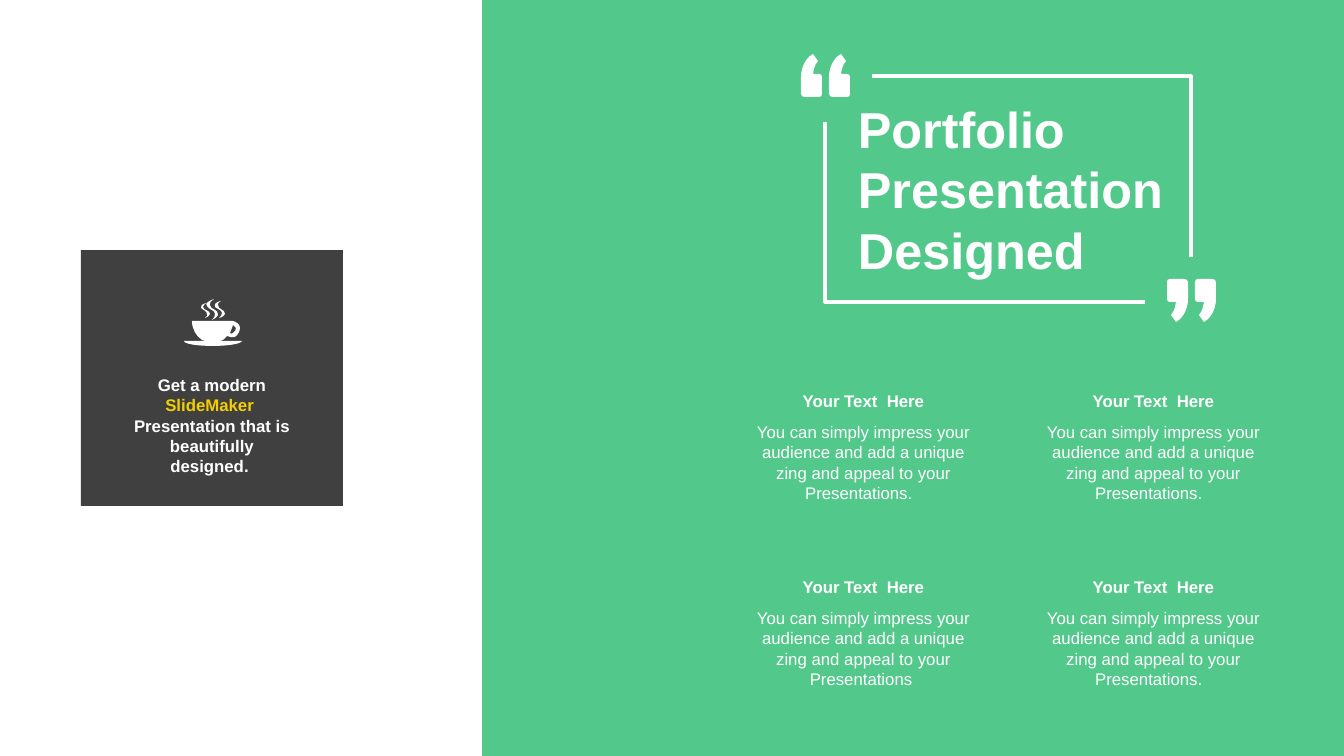
from lxml.etree import SubElement
from pptx import Presentation
from pptx.dml.color import RGBColor
from pptx.enum.shapes import MSO_SHAPE
from pptx.enum.text import MSO_AUTO_SIZE, PP_ALIGN
from pptx.oxml.ns import qn
from pptx.util import Pt

# Content
WHITE, GREEN, CHARCOAL, YELLOW = "FFFFFF", "52C88B", "404040", "F1CF01"
TITLE = [[("Portfolio", WHITE)], [("Presentation Designed", WHITE)]]
TAGLINE = [[("Get a modern ", WHITE), ("SlideMaker  ", YELLOW),
            ("Presentation that is beautifully designed. ", WHITE)]]
HEADING = "Your Text  Here"
PITCH = "You can simply impress your audience and add a unique zing and appeal to your Presentations"
FEATURES = [(HEADING, PITCH + ".  "), (HEADING, PITCH + ".  "),
            (HEADING, PITCH + " "), (HEADING, PITCH + ".  ")]

# Outlines in px: a pair is a corner, six numbers are a Bezier curve
QUOTE_MARK = [[
    (17, 0), (3, 0), (1, 0, 0, 1, 0, 3), (0, 20), (0, 22, 1, 23, 3, 23),
    (5, 23, 7, 23, 9, 23), (8, 28, 8, 31, 4, 36), (9, 43), (18, 38, 21, 27, 21, 20),
    (21, 20, 21, 18, 21, 17), (21, 3), (21, 1, 19, 0, 17, 0)]]
CUP = [
    [(49, 26), (48, 29, 47, 32, 46, 34), (47, 35, 48, 35, 49, 34),
     (51, 33, 52, 31, 52, 29), (51, 28, 50, 27, 49, 26)],
    [(49, 22), (52, 23, 56, 25, 56, 29), (56, 32, 54, 36, 51, 38),
     (48, 39, 46, 38, 43, 37), (42, 38, 41, 40, 39, 41), (38, 41, 36, 42, 35, 42),
     (58, 42), (57, 45, 44, 47, 29, 47), (13, 47, 0, 45, 0, 42), (22, 42),
     (21, 42, 19, 41, 18, 41), (12, 37, 8, 30, 8, 22)],
    [(23, 4), (21, 5, 19, 6, 19, 8), (20, 12, 26, 11, 26, 15), (25, 17, 24, 18, 21, 19),
     (23, 17, 24, 17, 23, 15), (23, 12, 19, 11, 17, 9), (16, 7, 18, 5, 23, 4)],
    [(37, 2), (35, 4, 33, 4, 34, 6), (34, 11, 41, 10, 41, 15), (40, 17, 39, 18, 35, 19),
     (37, 17, 38, 16, 38, 14), (38, 11, 33, 10, 31, 8), (30, 5, 32, 3, 37, 2)],
    [(30, 0), (27, 3, 25, 3, 26, 6), (26, 11, 35, 10, 34, 16), (33, 18, 32, 19, 28, 21),
     (30, 19, 31, 18, 31, 15), (31, 11, 25, 11, 23, 7), (21, 5, 24, 2, 30, 0)]]
FRAME_LINES = [[(872, 76), (1191, 76), (1191, 257)],
               [(1145, 302), (825, 302), (825, 122)]]
# Left, top and direction of each quote mark; -1 turns it upside down
QUOTE_PLACES = [(822, 97, -1), (850, 97, -1), (1195, 279, 1), (1167, 279, 1)]

# Layout
PX = 914400 / 100.8
GRID_LEFT, GRID_TOP, COLUMN_STEP, ROW_STEP = 741, 386, 290, 186
FEATURE_WIDTH, HEADING_HEIGHT, BODY_HEIGHT = 245, 31, 92


def px(length):
    return round(length * PX)


def color(hex_string):
    return RGBColor.from_string(hex_string)


def paint(shape, fill):
    shape.shadow.inherit = False
    shape.fill.solid()
    shape.fill.fore_color.rgb = color(fill)
    shape.line.fill.background()


def add_rectangle(page, left, top, width, height, fill):
    box = page.shapes.add_shape(MSO_SHAPE.RECTANGLE, px(left), px(top), px(width), px(height))
    paint(box, fill)


def add_text(page, left, top, width, height, paragraphs, size=12, bold=False,
             align=PP_ALIGN.CENTER):
    box = page.shapes.add_textbox(px(left), px(top), px(width), px(height))
    frame = box.text_frame
    frame.word_wrap = True
    frame.auto_size = MSO_AUTO_SIZE.SHAPE_TO_FIT_TEXT
    font_format = {"name": "Arial", "size": Pt(size), "bold": bold}
    for index, spans in enumerate(paragraphs):
        para = frame.add_paragraph() if index else frame.paragraphs[0]
        para.alignment = align
        for text, text_color in spans:
            span = para.add_run()
            span.text = text
            for name, value in font_format.items():
                setattr(span.font, name, value)
            span.font.color.rgb = color(text_color)


def add_outline(page, contours, left=0, top=0, direction=1, close=True):
    """Draw the contours, then bend the segments that are curves."""
    def place(numbers):
        return [(px(left + direction * x), px(top + direction * y))
                for x, y in zip(numbers[::2], numbers[1::2])]

    builder = None
    for contour in contours:
        ends = [place(segment)[-1] for segment in contour]
        if builder is None:
            builder = page.shapes.build_freeform(*ends[0], scale=1.0)
        else:
            builder.move_to(*ends[0])
        builder.add_line_segments(ends[1:], close=close)
    shape = builder.convert_to_shape()

    drawn = [node for node in shape.element.iter(qn("a:moveTo"), qn("a:lnTo"))]
    segments = [segment for contour in contours for segment in contour]
    for node, segment in zip(drawn, segments):
        if len(segment) == 6:
            node.tag = qn("a:cubicBezTo")
            for point in list(node):
                node.remove(point)
            for x, y in place(segment):
                SubElement(node, qn("a:pt"), x=str(x - shape.left), y=str(y - shape.top))
    return shape


def main():
    deck = Presentation()
    deck.slide_width, deck.slide_height = px(1344), px(756)
    page = deck.slides.add_slide(deck.slide_layouts[6])

    # Green panel
    add_rectangle(page, 482, 0, 862, 756, GREEN)

    # Feature grid, two by two
    for index, (heading, body) in enumerate(FEATURES):
        row, column = divmod(index, 2)
        left = GRID_LEFT + column * COLUMN_STEP
        top = GRID_TOP + row * ROW_STEP
        add_text(page, left, top, FEATURE_WIDTH, HEADING_HEIGHT, [[(heading, WHITE)]], bold=True)
        add_text(page, left, top + HEADING_HEIGHT, FEATURE_WIDTH, BODY_HEIGHT, [[(body, WHITE)]])

    # Framed title with quote marks
    for left, top, direction in QUOTE_PLACES:
        paint(add_outline(page, QUOTE_MARK, left, top, direction), WHITE)
    add_text(page, 848, 93, 335, 194, TITLE, size=36, bold=True, align=PP_ALIGN.LEFT)
    for corner in FRAME_LINES:
        frame_line = add_outline(page, [corner], close=False)
        frame_line.shadow.inherit = False
        frame_line.fill.background()
        frame_line.line.color.rgb = color(WHITE)
        frame_line.line.width = Pt(2.25)

    # Dark card with the cup
    add_rectangle(page, 81, 250, 262, 256, CHARCOAL)
    add_text(page, 121, 370, 182, 112, TAGLINE, bold=True)
    paint(add_outline(page, CUP, 184, 299), WHITE)

    deck.save("out.pptx")


if __name__ == "__main__":
    main()
